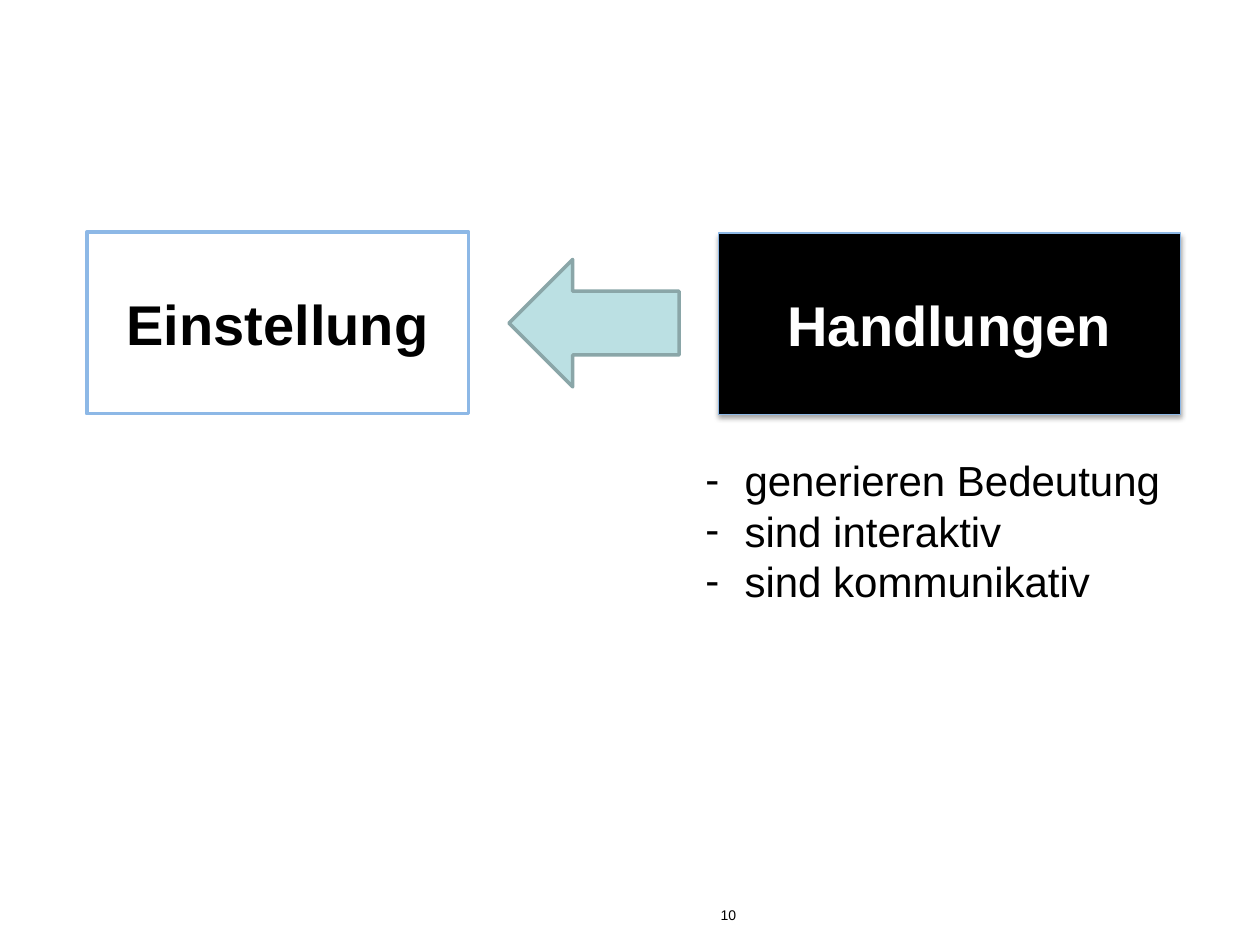
import pptx
import pptx.dml.color
import pptx.enum.shapes
import pptx.enum.text
import pptx.oxml
import pptx.oxml.ns
import pptx.util
from dataclasses import dataclass

Cm = pptx.util.Cm
Pt = pptx.util.Pt
Align = pptx.enum.text.PP_ALIGN
Shape = pptx.enum.shapes.MSO_SHAPE


@dataclass(frozen=True)
class Theme:
    font: str = "Arial"
    dark: str = "000000"
    light: str = "FFFFFF"
    border: str = "8DB8E6"
    arrow: str = "BBE0E3"
    arrow_border: str = "8AA6A8"
    concept_size: int = 32
    list_size: int = 24
    number_size: int = 8


THEME = Theme()


def rgb(value):
    return pptx.dml.color.RGBColor.from_string(value)


def format_paragraph(paragraph, size, color, align=Align.LEFT, bold=False):
    paragraph.alignment = align
    for run in paragraph.runs:
        run.font.name = THEME.font
        run.font.size = Pt(size)
        run.font.bold = bold
        run.font.color.rgb = rgb(color)


def add_figure(slide, kind, box, fill, line, line_width):
    figure = slide.shapes.add_shape(kind, *map(Cm, box))
    figure.shadow.inherit = False
    figure.fill.solid()
    figure.fill.fore_color.rgb = rgb(fill)
    figure.line.color.rgb = rgb(line)
    figure.line.width = Pt(line_width)
    return figure


def add_concept(slide, label, box, fill, color, line_width):
    concept = add_figure(slide, Shape.RECTANGLE, box, fill, THEME.border, line_width)
    frame = concept.text_frame
    frame.text = label
    frame.vertical_anchor = pptx.enum.text.MSO_ANCHOR.MIDDLE
    format_paragraph(frame.paragraphs[0], THEME.concept_size, color, Align.CENTER, True)
    return concept


def add_drop_shadow(figure):
    effects = figure.element.spPr.find(pptx.oxml.ns.qn("a:effectLst"))
    effects.append(pptx.oxml.parse_xml(
        f'<a:outerShdw {pptx.oxml.ns.nsdecls("a")} blurRad="{Pt(3.1)}" '
        f'dist="{Pt(1.8)}" dir="5400000" rotWithShape="0">'
        f'<a:srgbClr val="{THEME.dark}"><a:alpha val="35000"/></a:srgbClr>'
        '</a:outerShdw>'))


def add_text(slide, text, box, size, align=Align.LEFT):
    frame = slide.shapes.add_textbox(*map(Cm, box)).text_frame
    frame.word_wrap = True
    frame.text = text
    for paragraph in frame.paragraphs:
        format_paragraph(paragraph, size, THEME.dark, align)
    return frame


def add_dash_list(slide, items, box):
    frame = add_text(slide, "\n".join(items), box, THEME.list_size)
    frame.auto_size = pptx.enum.text.MSO_AUTO_SIZE.SHAPE_TO_FIT_TEXT
    indent = Cm(0.79)
    for paragraph in frame.paragraphs:
        properties = paragraph._p.get_or_add_pPr()
        properties.set("marL", str(indent))
        properties.set("indent", str(-indent))
        for bullet in ('<a:buFont {} typeface="Arial"/>', '<a:buChar {} char="-"/>'):
            properties.append(pptx.oxml.parse_xml(
                bullet.format(pptx.oxml.ns.nsdecls("a"))))


def main():
    presentation = pptx.Presentation()
    presentation.slide_width = Cm(25.4)
    presentation.slide_height = Cm(19.05)
    slide = presentation.slides.add_slide(presentation.slide_layouts[6])

    add_text(slide, "10", (12.37, 18.16, 2.72, 0.89), THEME.number_size, Align.RIGHT)
    actions = add_concept(slide, "Handlungen", (14.48, 4.7, 9.32, 3.66),
                          THEME.dark, THEME.light, 0.75)
    add_drop_shadow(actions)
    add_figure(slide, Shape.LEFT_ARROW, (10.26, 5.23, 3.43, 2.57),
               THEME.arrow, THEME.arrow_border, 2)
    add_concept(slide, "Einstellung", (1.75, 4.68, 7.7, 3.66),
                THEME.light, THEME.dark, 2)
    add_dash_list(slide, ("generieren Bedeutung", "sind interaktiv", "sind kommunikativ"),
                  (13.97, 9.04, 9.83, 3.33))

    presentation.save("out.pptx")


if __name__ == "__main__":
    main()
